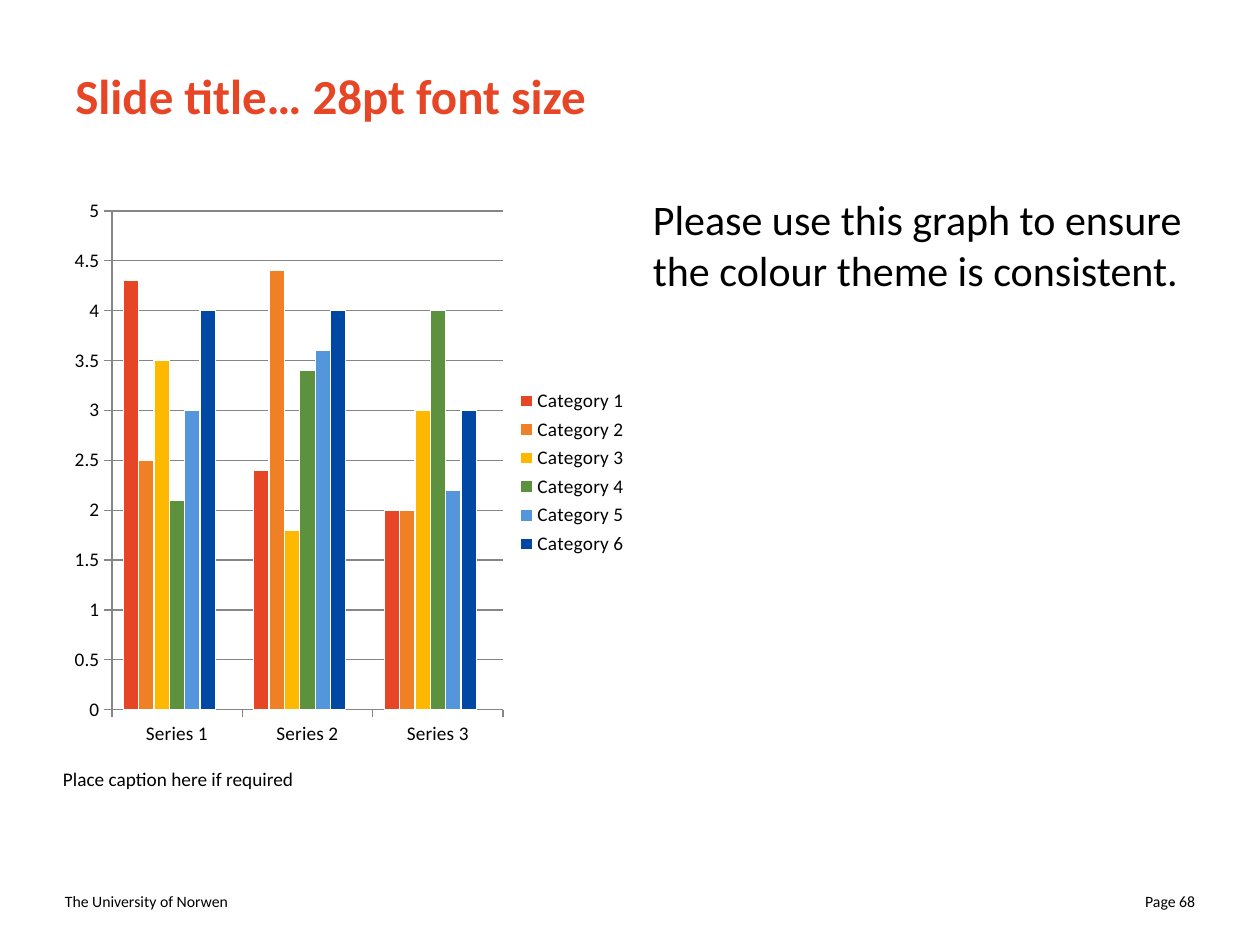
from collections import namedtuple
from dataclasses import dataclass

from lxml import etree
from pptx import Presentation
from pptx.chart.data import CategoryChartData
from pptx.dml.color import RGBColor
from pptx.enum.chart import XL_CHART_TYPE, XL_LEGEND_POSITION, XL_TICK_MARK
from pptx.enum.text import MSO_ANCHOR, PP_ALIGN
from pptx.oxml.ns import qn
from pptx.util import Pt

CLUSTERED = XL_CHART_TYPE.COLUMN_CLUSTERED
LEGEND_RIGHT = XL_LEGEND_POSITION.RIGHT
TICK_OUT, TICK_NONE = XL_TICK_MARK.OUTSIDE, XL_TICK_MARK.NONE
TOP, MIDDLE = MSO_ANCHOR.TOP, MSO_ANCHOR.MIDDLE
LEFT, RIGHT = PP_ALIGN.LEFT, PP_ALIGN.RIGHT

Box = namedtuple("Box", "left top width height")


@dataclass(frozen=True)
class Theme:
    font: str = "Calibri"
    title_size: int = 28
    body_size: int = 24
    small_size: int = 11
    footer_size: int = 9
    ink: str = "000000"
    paper: str = "FFFFFF"
    accent: str = "E64626"
    rule: str = "868686"
    palette: tuple = ("E64626", "EF8025", "FFB800", "5C923E", "5496DB", "0148A4")


THEME = Theme()
SLIDE_WIDTH, SLIDE_HEIGHT = 720, 540
MARGIN = 36
INSETS = (7.2, 3.6, 7.2, 3.6)
CAPTION_INSETS = (0, 5.76, 5.76, 3.6)

GROUPS = ("Series 1", "Series 2", "Series 3")
RATINGS = (
    ("Category 1", (4.3, 2.4, 2)),
    ("Category 2", (2.5, 4.4, 2)),
    ("Category 3", (3.5, 1.8, 3)),
    ("Category 4", (2.1, 3.4, 4)),
    ("Category 5", (3, 3.6, 2.2)),
    ("Category 6", (4, 4, 3)),
)
SPACER = ("Series 7", (None, None, None))


def style_font(font, size, color=THEME.ink, bold=False):
    font.name = THEME.font
    font.size = Pt(size)
    font.bold = bold
    font.color.rgb = RGBColor.from_string(color)


def add_text(slide, box, wording, size, color=THEME.ink, bold=False,
             align=LEFT, anchor=TOP, insets=INSETS):
    frame = slide.shapes.add_textbox(*map(Pt, box)).text_frame
    frame.word_wrap = True
    frame.vertical_anchor = anchor
    (frame.margin_left, frame.margin_top,
     frame.margin_right, frame.margin_bottom) = map(Pt, insets)
    paragraph = frame.paragraphs[0]
    paragraph.text = wording
    paragraph.alignment = align
    style_font(paragraph.font, size, color, bold)


def add_title(slide, box):
    add_text(slide, box, "Slide title… 28pt font size", THEME.title_size,
             THEME.accent, bold=True, anchor=MIDDLE)


def rule_line(line):
    line.color.rgb = RGBColor.from_string(THEME.rule)
    line.width = Pt(0.75)


def hide_legend_entry(legend, index):
    entry = etree.Element(qn("c:legendEntry"))
    etree.SubElement(entry, qn("c:idx")).set("val", str(index))
    etree.SubElement(entry, qn("c:delete")).set("val", "1")
    legend._element.find(qn("c:legendPos")).addnext(entry)


def add_ratings_chart(slide, box):
    ratings = CategoryChartData()
    ratings.categories = GROUPS
    for name, values in (*RATINGS, SPACER):
        ratings.add_series(name, values)
    chart = slide.shapes.add_chart(CLUSTERED, *map(Pt, box), ratings).chart
    chart.has_title = False
    style_font(chart.font, THEME.small_size)

    chart.has_legend = True
    chart.legend.position = LEGEND_RIGHT
    chart.legend.include_in_layout = False
    hide_legend_entry(chart.legend, len(RATINGS))

    plot = chart.plots[0]
    plot.gap_width = 150
    plot.vary_by_categories = False
    for column, color in zip(plot.series, THEME.palette):
        column.format.fill.solid()
        column.format.fill.fore_color.rgb = RGBColor.from_string(color)
        column.format.line.color.rgb = RGBColor.from_string(THEME.paper)
        column.format.line.width = Pt(0.75)

    for axis in (chart.category_axis, chart.value_axis):
        axis.major_tick_mark = TICK_OUT
        axis.minor_tick_mark = TICK_NONE
        rule_line(axis.format.line)
    scale = chart.value_axis
    scale.minimum_scale, scale.maximum_scale, scale.major_unit = 0, 5, 0.5
    scale.has_major_gridlines = True
    rule_line(scale.major_gridlines.format.line)


def add_content(slide, box):
    text_width = 318
    chart_width = box.width - text_width
    chart_height = 325.4
    add_ratings_chart(slide, Box(box.left, box.top, chart_width, chart_height))
    add_text(slide, Box(box.left, box.top + chart_height, text_width, 42.5),
             "Place caption here if required", THEME.small_size,
             insets=CAPTION_INSETS)
    add_text(slide, Box(box.left + chart_width, box.top, text_width, box.height),
             "Please use this graph to ensure the colour theme is consistent.",
             THEME.body_size)


def add_footer(slide, box):
    width = 168
    labels = (
        ("The University of Norwen", box.left, LEFT),
        ("Page 68", box.left + box.width - width, RIGHT),
    )
    for wording, left, align in labels:
        add_text(slide, Box(left, box.top, width, box.height), wording,
                 THEME.footer_size, align=align, anchor=MIDDLE)


def main():
    deck = Presentation()
    deck.slide_width, deck.slide_height = Pt(SLIDE_WIDTH), Pt(SLIDE_HEIGHT)
    slide = deck.slides.add_slide(deck.slide_layouts[6])
    content_width = SLIDE_WIDTH - 2 * MARGIN
    add_footer(slide, Box(30, 500.5, SLIDE_WIDTH - 2 * 30, 28.75))
    add_title(slide, Box(MARGIN, 9.5, content_width, 90))
    add_content(slide, Box(MARGIN, 107.3, content_width, 356.4))
    deck.save("out.pptx")


if __name__ == "__main__":
    main()
